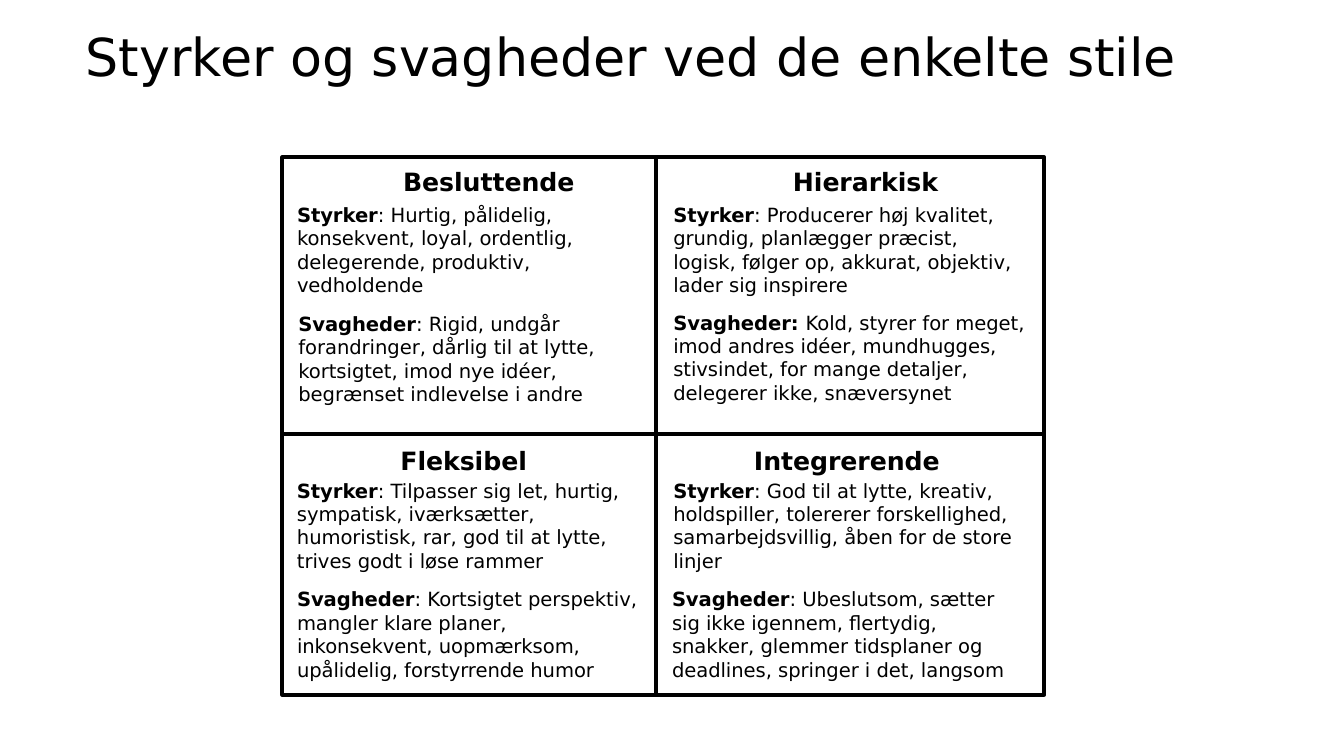
"""Builds a slide that sets out strengths and weaknesses of four styles in a matrix."""
from dataclasses import dataclass

import lxml.etree
import pptx
import pptx.dml.color
import pptx.enum.shapes
import pptx.enum.text
import pptx.oxml.ns
import pptx.util

Inches = pptx.util.Inches


@dataclass(frozen=True)
class Theme:
    font: str = "DejaVu Sans"
    ink: str = "000000"
    title_size: float = 28
    heading_size: float = 13.5
    body_size: float = 10.5
    line_width: float = 2


class SlideBuilder:
    def __init__(self, slide, theme):
        self.slide = slide
        self.theme = theme
        self.ink = pptx.dml.color.RGBColor.from_string(theme.ink)

    def text(self, box, runs, size, insets=(0, 0), wrap=True, grow=True, centred=False):
        shape = self.slide.shapes.add_textbox(*map(Inches, box))
        frame = shape.text_frame
        frame.margin_left = frame.margin_right = Inches(insets[0])
        frame.margin_top = frame.margin_bottom = Inches(insets[1])
        frame.word_wrap = wrap
        sizing = pptx.enum.text.MSO_AUTO_SIZE
        frame.auto_size = sizing.SHAPE_TO_FIT_TEXT if grow else sizing.NONE
        paragraph = frame.paragraphs[0]
        alignment = pptx.enum.text.PP_ALIGN
        paragraph.alignment = alignment.CENTER if centred else alignment.LEFT
        paragraph.font.name = self.theme.font
        paragraph.font.size = pptx.util.Pt(size)
        paragraph.font.color.rgb = self.ink
        for content, bold in runs:
            run = paragraph.add_run()
            run.text = content
            run.font.bold = bold

    def title(self, box, content):
        self.text(box, [(content, False)], self.theme.title_size, grow=False, centred=True)

    def heading(self, box, content):
        self.text(box, [(content, True)], self.theme.heading_size, (0.08, 0.04), wrap=False)

    def body(self, box, label, content):
        self.text(box, [(label, True), (content, False)], self.theme.body_size)

    def outline(self, line):
        line.color.rgb = self.ink
        line.width = pptx.util.Pt(self.theme.line_width)

    def line(self, *ends):
        connector = self.slide.shapes.add_connector(
            pptx.enum.shapes.MSO_CONNECTOR.STRAIGHT, *map(Inches, ends))
        self.outline(connector.line)
        lxml.etree.SubElement(connector._element.spPr, pptx.oxml.ns.qn("a:effectLst"))

    def frame(self, box):
        shape = self.slide.shapes.add_shape(
            pptx.enum.shapes.MSO_SHAPE.RECTANGLE, *map(Inches, box))
        shape.shadow.inherit = False
        shape.fill.background()
        self.outline(shape.line)


SLIDE_WIDTH = 10
LEFT, TOP, WIDTH, HEIGHT = 2.1, 1.17, 5.67, 4
DIVIDER_X, DIVIDER_Y = 4.88, 3.23

HEADINGS = [
    ((2.92, 1.2, 1.46, 0.3), "Besluttende"),
    ((2.9, 3.27, 1.17, 0.3), "Fleksibel"),
    ((5.82, 1.2, 1.25, 0.3), "Hierarkisk"),
    ((5.53, 3.27, 1.58, 0.3), "Integrerende"),
]

BODIES = [
    ((2.21, 1.51, 2.58, 0.71), "Styrker",
     ": Hurtig, pålidelig, konsekvent, loyal, ordentlig, delegerende, produktiv, vedholdende"),
    ((2.22, 2.32, 2.58, 0.71), "Svagheder",
     ": Rigid, undgår forandringer, dårlig til at lytte, kortsigtet, imod nye idéer, "
     "begrænset indlevelse i andre"),
    ((5.01, 1.51, 2.59, 0.71), "Styrker",
     ": Producerer høj kvalitet, grundig, planlægger præcist, logisk, følger op, akkurat, "
     "objektiv, lader sig inspirere"),
    ((5.01, 2.31, 2.65, 0.88), "Svagheder: ",
     "Kold, styrer for meget, imod andres idéer, mundhugges, stivsindet, for mange detaljer, "
     "delegerer ikke, snæversynet"),
    ((2.21, 3.56, 2.56, 0.71), "Styrker",
     ": Tilpasser sig let, hurtig, sympatisk, iværksætter, humoristisk, rar, god til at lytte, "
     "trives godt i løse rammer"),
    ((2.21, 4.37, 2.58, 0.71), "Svagheder",
     ": Kortsigtet perspektiv, mangler klare planer, inkonsekvent, uopmærksom, upålidelig, "
     "forstyrrende humor"),
    ((5.01, 3.56, 2.65, 0.71), "Styrker",
     ": God til at lytte, kreativ, holdspiller, tolererer forskellighed, samarbejdsvillig, "
     "åben for de store linjer"),
    ((5, 4.37, 2.61, 0.71), "Svagheder",
     ": Ubeslutsom, sætter sig ikke igennem, flertydig, snakker, glemmer tidsplaner og "
     "deadlines, springer i det, langsom"),
]


def main():
    presentation = pptx.Presentation()
    presentation.slide_width = Inches(SLIDE_WIDTH)
    presentation.slide_height = Inches(SLIDE_WIDTH * 9 / 16)
    slide = presentation.slides.add_slide(presentation.slide_layouts[6])
    builder = SlideBuilder(slide, Theme())

    builder.title((0.46, 0.18, 8.47, 0.74), "Styrker og svagheder ved de enkelte stile")
    builder.line(LEFT, DIVIDER_Y, LEFT + WIDTH, DIVIDER_Y)
    builder.line(DIVIDER_X, TOP, DIVIDER_X, TOP + HEIGHT)
    for box, content in HEADINGS:
        builder.heading(box, content)
    builder.frame((LEFT, TOP, WIDTH, HEIGHT))
    for box, label, content in BODIES:
        builder.body(box, label, content)

    presentation.save("out.pptx")


if __name__ == "__main__":
    main()
